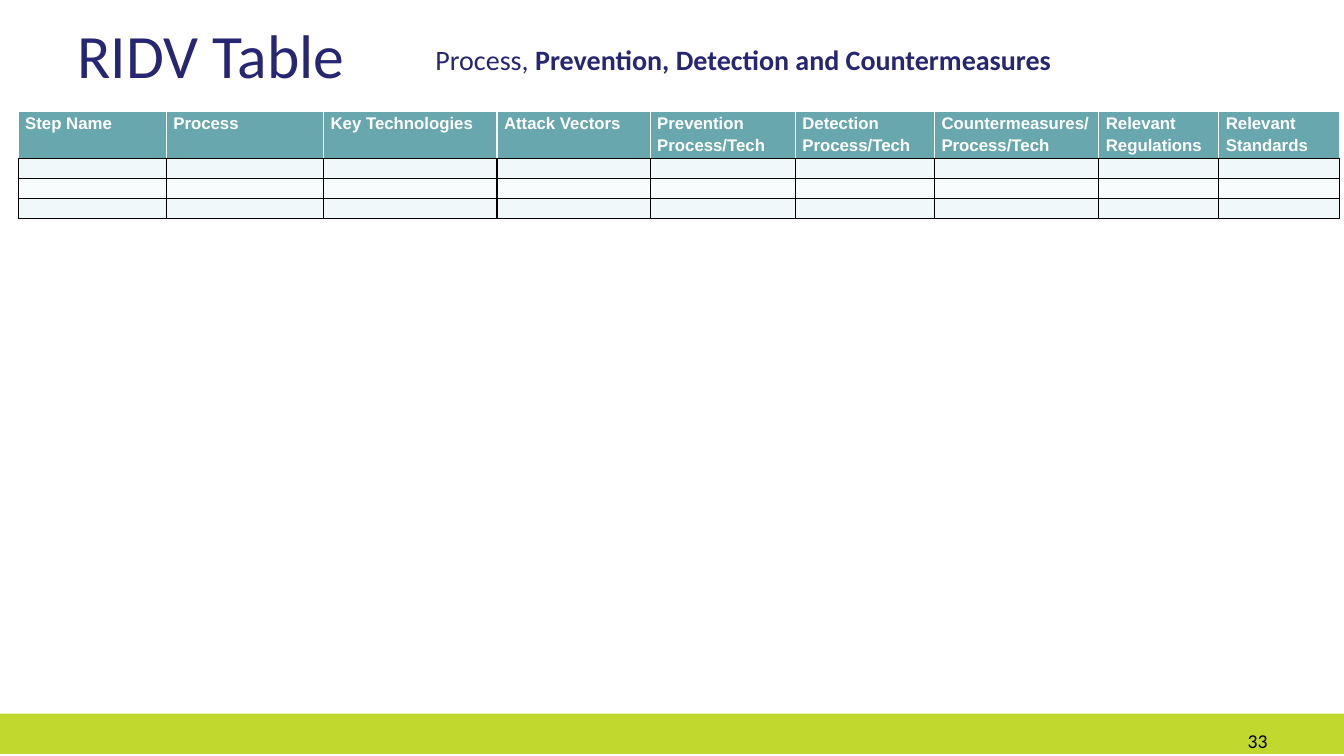
from lxml.etree import SubElement
from pptx import Presentation
from pptx.dml.color import RGBColor
from pptx.enum.shapes import MSO_SHAPE as Shape
from pptx.enum.text import MSO_ANCHOR as Anchor, PP_ALIGN as Align
from pptx.oxml import parse_xml
from pptx.oxml.ns import nsdecls, qn
from pptx.util import Inches, Pt

NAVY = RGBColor(0x26, 0x26, 0x73)
LIME = RGBColor(0xC1, 0xD8, 0x2E)
TEAL = RGBColor(0x69, 0xA7, 0xAE)
PALE = RGBColor(0xF1, 0xF8, 0xF9)
PALER = RGBColor(0xF8, 0xFC, 0xFC)
WHITE = RGBColor(0xFF, 0xFF, 0xFF)
BLACK = RGBColor(0, 0, 0)

COLUMNS = [
    ("Step Name", 1.47),
    ("Process", 1.56),
    ("Key Technologies", 1.72),
    ("Attack Vectors", 1.52),
    ("Prevention Process/Tech", 1.44),
    ("Detection Process/Tech", 1.38),
    ("Countermeasures/Process/Tech", 1.63),
    ("Relevant Regulations", 1.19),
    ("Relevant Standards", 1.2),
]
EMPTY_ROWS = 3
HEADER_HEIGHT, ROW_HEIGHT = 0.42, 0.2


class Page:
    """The current slide and its text style."""
    heading_font = "Calibri"
    table_font = "Arial"

    def __init__(self, deck):
        self.shapes = deck.slides.add_slide(deck.slide_layouts[6]).shapes

    def style(self, span, font, size, color, bold=False):
        span.font.name = font
        span.font.size = Pt(size)
        span.font.color.rgb = color
        span.font.bold = bold

    def band(self, left, top, width, height, color):
        bar = self.shapes.add_shape(Shape.RECTANGLE, Inches(left), Inches(top),
                                    Inches(width), Inches(height))
        bar.shadow.inherit = False
        bar.fill.solid()
        bar.fill.fore_color.rgb = color
        bar.line.fill.background()

    def text(self, left, top, width, height, spans, size, color,
             anchor=Anchor.TOP, align=Align.LEFT):
        box = self.shapes.add_textbox(Inches(left), Inches(top),
                                      Inches(width), Inches(height))
        frame = box.text_frame
        frame.word_wrap = True
        frame.vertical_anchor = anchor
        para = frame.paragraphs[0]
        para.alignment = align
        for words, bold in spans:
            span = para.add_run()
            span.text = words
            self.style(span, self.heading_font, size, color, bold)

    def borders(self, cell, sides):
        properties = cell._tc.get_or_add_tcPr()
        for index, side in enumerate(sides):
            properties.insert(index, parse_xml(
                f'<a:ln{side} {nsdecls("a")} w="12700"><a:solidFill>'
                f'<a:srgbClr val="{BLACK}"/></a:solidFill></a:ln{side}>'))

    def cell(self, cell, words, fill, sides):
        cell.margin_left = cell.margin_right = Inches(0.07)
        cell.margin_top = cell.margin_bottom = 0
        cell.fill.solid()
        cell.fill.fore_color.rgb = fill
        self.borders(cell, sides)
        if words:
            cell.text_frame.text = words
            para = cell.text_frame.paragraphs[0]
            para.line_spacing = 1.15
            self.style(para.runs[0], self.table_font, 12, WHITE, True)
        else:
            # Small end mark keeps the empty row low
            para = cell.text_frame.paragraphs[0]
            SubElement(para._p, qn("a:endParaRPr"), sz="1100")

    def table(self, left, top, columns, empty_rows):
        width = sum(column_width for _, column_width in columns)
        height = HEADER_HEIGHT + empty_rows * ROW_HEIGHT
        grid = self.shapes.add_table(empty_rows + 1, len(columns), Inches(left),
                                     Inches(top), Inches(width), Inches(height)).table
        for row_index, row in enumerate(grid.rows):
            row.height = Inches(ROW_HEIGHT if row_index else HEADER_HEIGHT)
            for column_index, (name, column_width) in enumerate(columns):
                grid.columns[column_index].width = Inches(column_width)
                cell = grid.cell(row_index, column_index)
                if row_index == 0:
                    self.cell(cell, name, TEAL, "B")
                else:
                    self.cell(cell, "", PALE if row_index % 2 else PALER, "LRTB")


def main():
    deck = Presentation()
    deck.slide_width, deck.slide_height = Inches(13.33), Inches(7.5)
    page = Page(deck)

    # Footer band
    page.band(-0.1, 7.08, 13.55, 0.4, LIME)

    # Title and subtitle
    page.text(0.67, -0.09, 12, 1.25, [("RIDV Table", False)], 44, NAVY, Anchor.MIDDLE)
    page.text(4.22, 0.37, 8, 0.54,
              [("Process, ", False), ("Prevention, Detection and Countermeasures", True)],
              20, NAVY)

    # Table to fill in
    page.table(0.18, 1.11, COLUMNS, EMPTY_ROWS)

    # Page number
    page.text(9.56, 7.18, 3.11, 0.31, [("33", False)], 14, BLACK, align=Align.RIGHT)

    deck.save("out.pptx")


if __name__ == "__main__":
    main()
